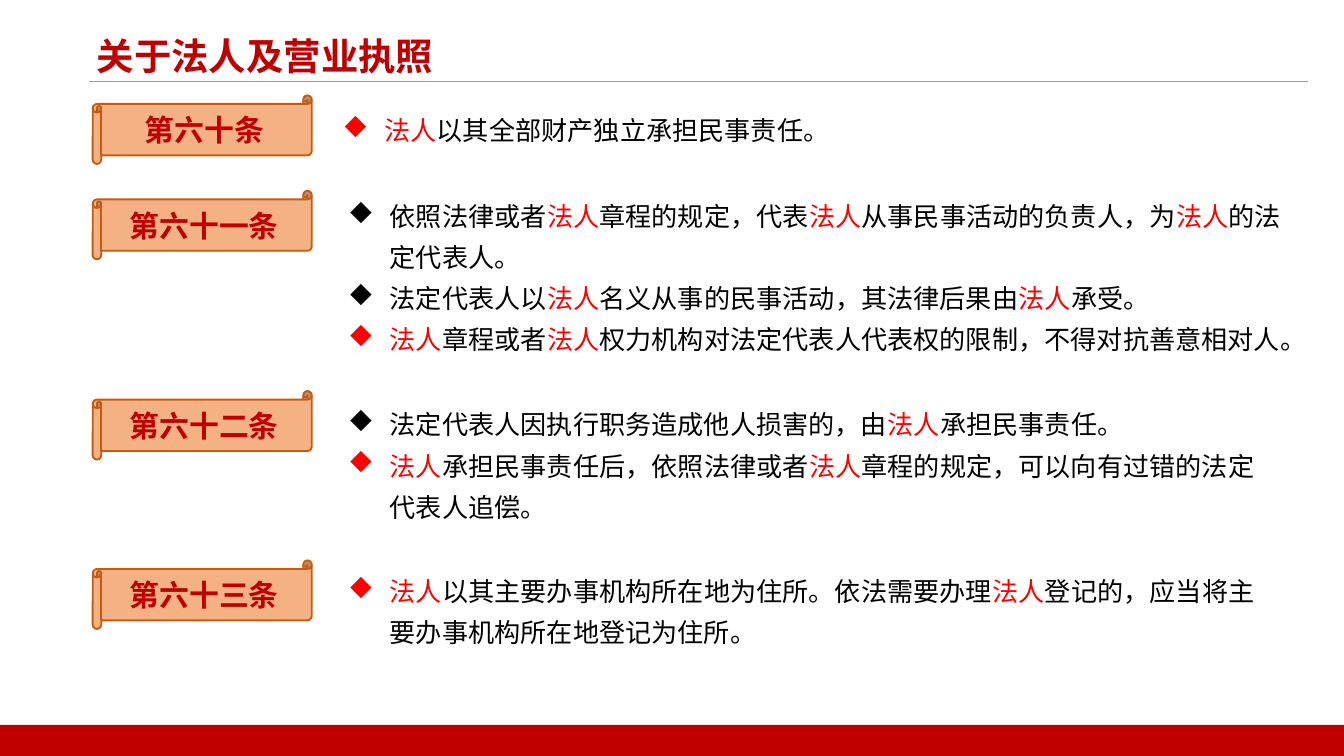
from pptx import Presentation
from pptx.dml.color import RGBColor
from pptx.enum.shapes import MSO_CONNECTOR as Connector, MSO_SHAPE as Shape
from pptx.enum.text import MSO_ANCHOR as Anchor, MSO_AUTO_SIZE as AutoSize, PP_ALIGN as Align
from pptx.oxml.ns import qn
from pptx.util import Inches, Pt
from lxml.etree import SubElement

FONT = "Noto Sans CJK SC"
DARK_RED, RED, BLACK = "C00000", "FF0000", "000000"
WIDTH = 10
HEIGHT = WIDTH * 9 / 16
FOOTER_HEIGHT = 0.23
SCROLL_LEFT, SCROLL_WIDTH, SCROLL_HEIGHT = 0.69, 1.63, 0.51
INDENT = 0.31
KEYWORD = "法人"

TITLE = "关于法人及营业执照"
ARTICLES = [
    {"name": "第六十条", "top": 0.71, "clauses_at": (2.45, 0.8, 3.86, 0.34), "pitch": None,
     "clauses": ["法人以其全部财产独立承担民事责任。"]},
    {"name": "第六十一条", "top": 1.42, "clauses_at": (2.49, 1.37, 7.21, 1.29), "pitch": 22,
     "clauses": ["依照法律或者法人章程的规定，代表法人从事民事活动的负责人，为法人的法定代表人。",
                 "法定代表人以法人名义从事的民事活动，其法律后果由法人承受。",
                 "法人章程或者法人权力机构对法定代表人代表权的限制，不得对抗善意相对人。"]},
    {"name": "第六十二条", "top": 2.91, "clauses_at": (2.49, 2.92, 7.05, 0.98), "pitch": 22,
     "clauses": ["法定代表人因执行职务造成他人损害的，由法人承担民事责任。",
                 "法人承担民事责任后，依照法律或者法人章程的规定，可以向有过错的法定代表人追偿。"]},
    {"name": "第六十三条", "top": 4.17, "clauses_at": (2.49, 4.16, 7.05, 0.68), "pitch": 22,
     "clauses": ["法人以其主要办事机构所在地为住所。依法需要办理法人登记的，应当将主要办事机构所在地登记为住所。"]},
]


def rgb(color):
    return RGBColor.from_string(color)


def style(run, size, color, bold=False):
    run.font.size, run.font.bold, run.font.name = Pt(size), bold, FONT
    run.font.color.rgb = rgb(color)
    SubElement(run.font._element, qn("a:ea"), typeface=FONT)


def place(holder, left, top, width, height):
    holder.left, holder.top = Inches(left), Inches(top)
    holder.width, holder.height = Inches(width), Inches(height)
    frame = holder.text_frame
    frame.auto_size, frame.vertical_anchor = AutoSize.NONE, Anchor.TOP
    frame.word_wrap = True
    return frame


def add_box(slide, preset, at, fill, outline=None):
    box = slide.shapes.add_shape(preset, *map(Inches, at))
    box.shadow.inherit = False
    box.fill.solid()
    box.fill.fore_color.rgb = rgb(fill)
    if outline:
        box.line.color.rgb = rgb(outline)
        box.line.width = Pt(1)
    else:
        box.line.fill.background()
    return box


def add_title(slide):
    frame = place(slide.shapes.title, 0.62, 0.2, 3.12, 0.51)
    frame.text = TITLE
    heading = frame.paragraphs[0]
    heading.alignment = Align.LEFT
    style(heading.runs[0], 20, DARK_RED, True)
    rule = slide.shapes.add_connector(Connector.STRAIGHT, *map(Inches, (0.66, 0.61, 9.73, 0.61)))
    rule.line.color.rgb = rgb("999999")
    rule.line.width = Pt(0.5)
    SubElement(rule._element.spPr, qn("a:effectLst"))


def add_scroll(slide, name, top):
    at = (SCROLL_LEFT, top, SCROLL_WIDTH, SCROLL_HEIGHT)
    scroll = add_box(slide, Shape.HORIZONTAL_SCROLL, at, "F4B183", "C55A11")
    scroll.text_frame.text = name
    scroll.text_frame.vertical_anchor = Anchor.MIDDLE
    label = scroll.text_frame.paragraphs[0]
    label.alignment = Align.CENTER
    style(label.runs[0], 16, DARK_RED, True)


def add_diamond(paragraph):
    properties = paragraph._p.get_or_add_pPr()
    properties.set("marL", str(Inches(INDENT)))
    properties.set("indent", str(Inches(-INDENT)))
    SubElement(properties, qn("a:buFont"), typeface="Wingdings", charset="2")
    SubElement(properties, qn("a:buChar"), char="u")


def split_clause(clause):
    for index, part in enumerate(clause.split(KEYWORD)):
        if index:
            yield KEYWORD, RED
        if part:
            yield part, BLACK


def fill_clauses(holder, article):
    frame = place(holder, *article["clauses_at"])
    for index, clause in enumerate(article["clauses"]):
        paragraph = frame.add_paragraph() if index else frame.paragraphs[0]
        add_diamond(paragraph)
        paragraph.space_before = Pt(0)
        if article["pitch"]:
            paragraph.line_spacing = Pt(article["pitch"])
        for words, color in split_clause(clause):
            run = paragraph.add_run()
            run.text = words
            style(run, 14, color)


def main():
    """Build the slide on the articles about legal persons."""
    deck = Presentation()
    deck.slide_width, deck.slide_height = Inches(WIDTH), Inches(HEIGHT)
    slide = deck.slides.add_slide(deck.slide_layouts.get_by_name("Comparison"))
    add_title(slide)
    add_box(slide, Shape.RECTANGLE, (0, HEIGHT - FOOTER_HEIGHT, WIDTH, FOOTER_HEIGHT), DARK_RED)
    bodies = list(slide.placeholders)[1:]
    for body, article in zip(bodies, ARTICLES):
        add_scroll(slide, article["name"], article["top"])
        fill_clauses(body, article)
    deck.save("out.pptx")


if __name__ == "__main__":
    main()
